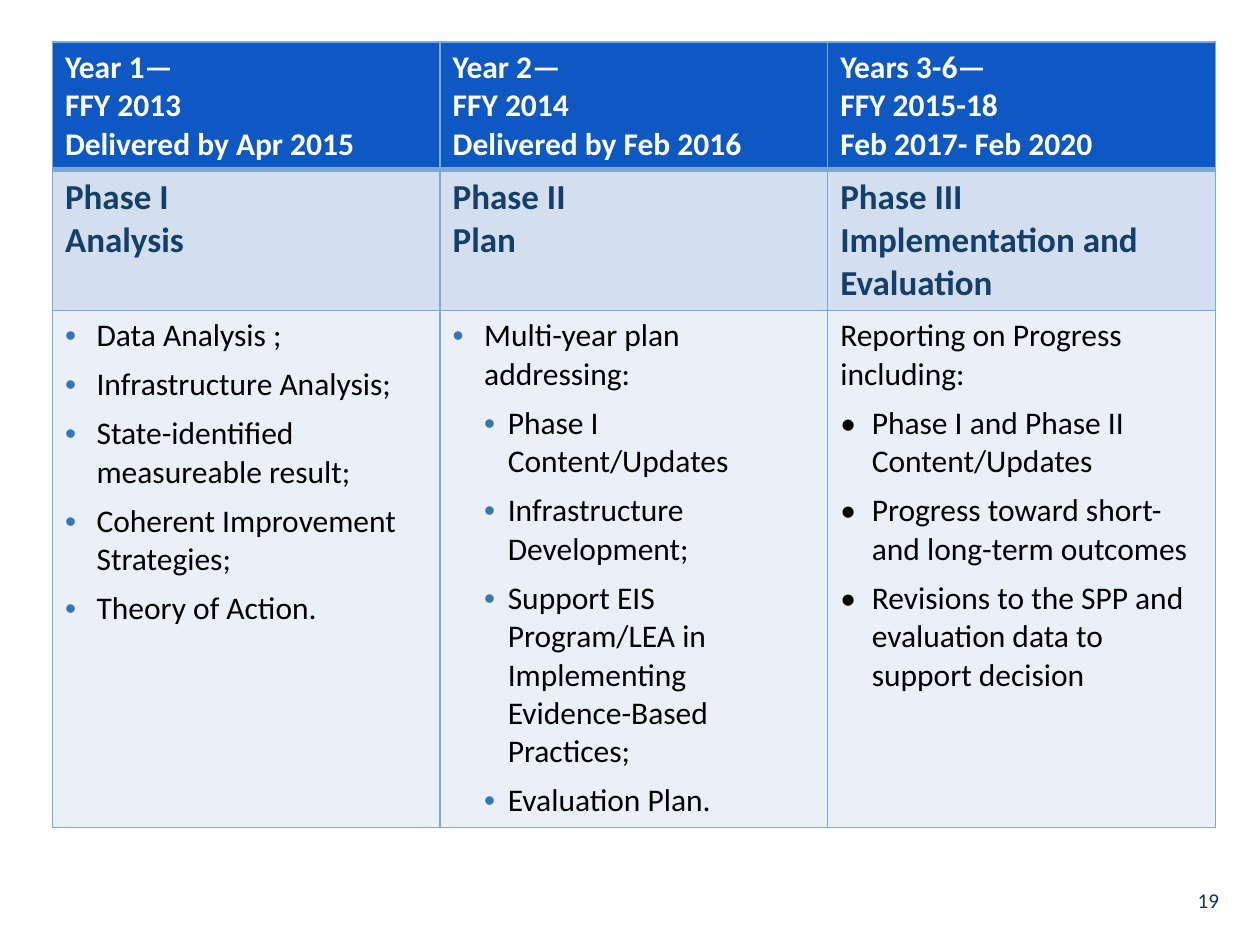
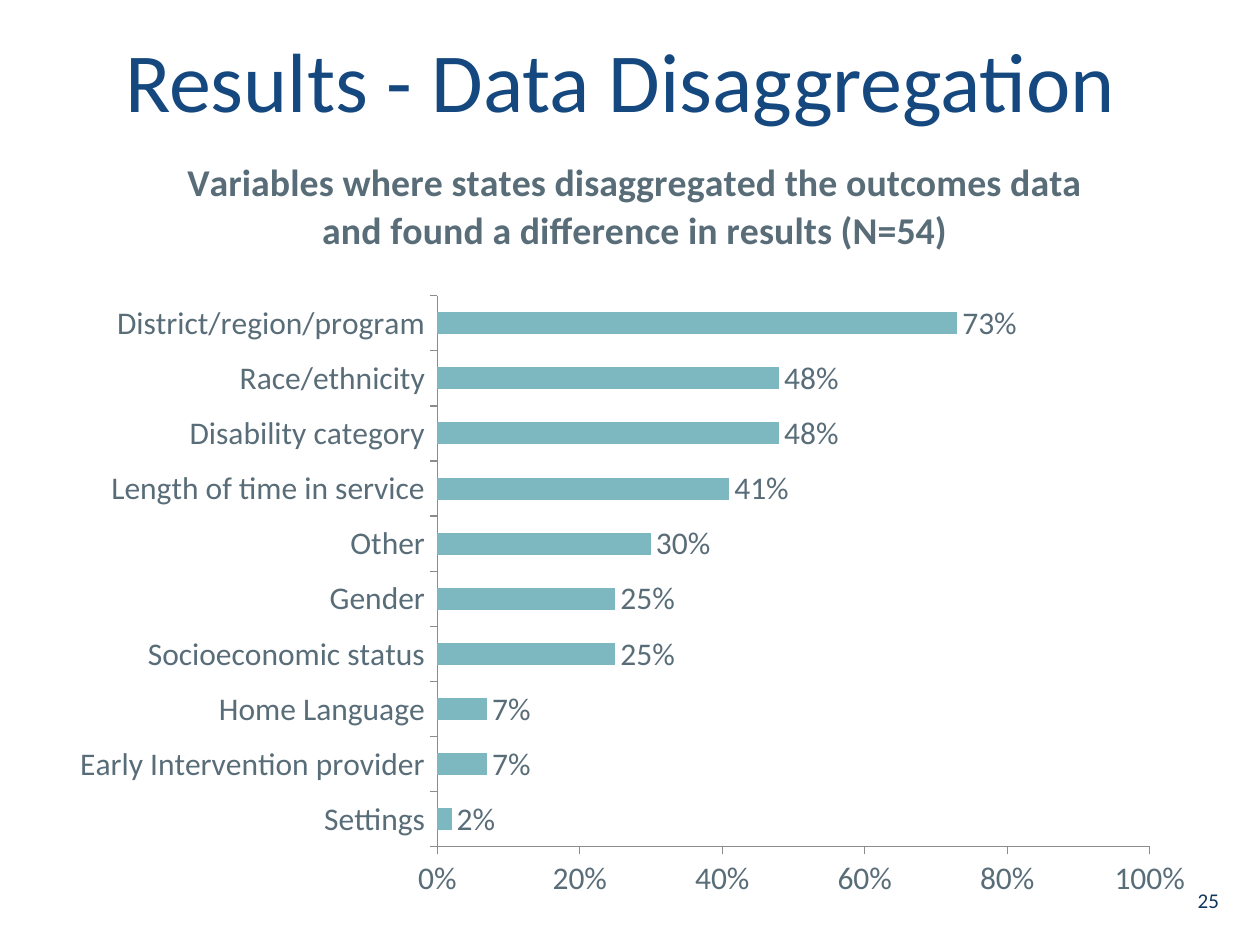
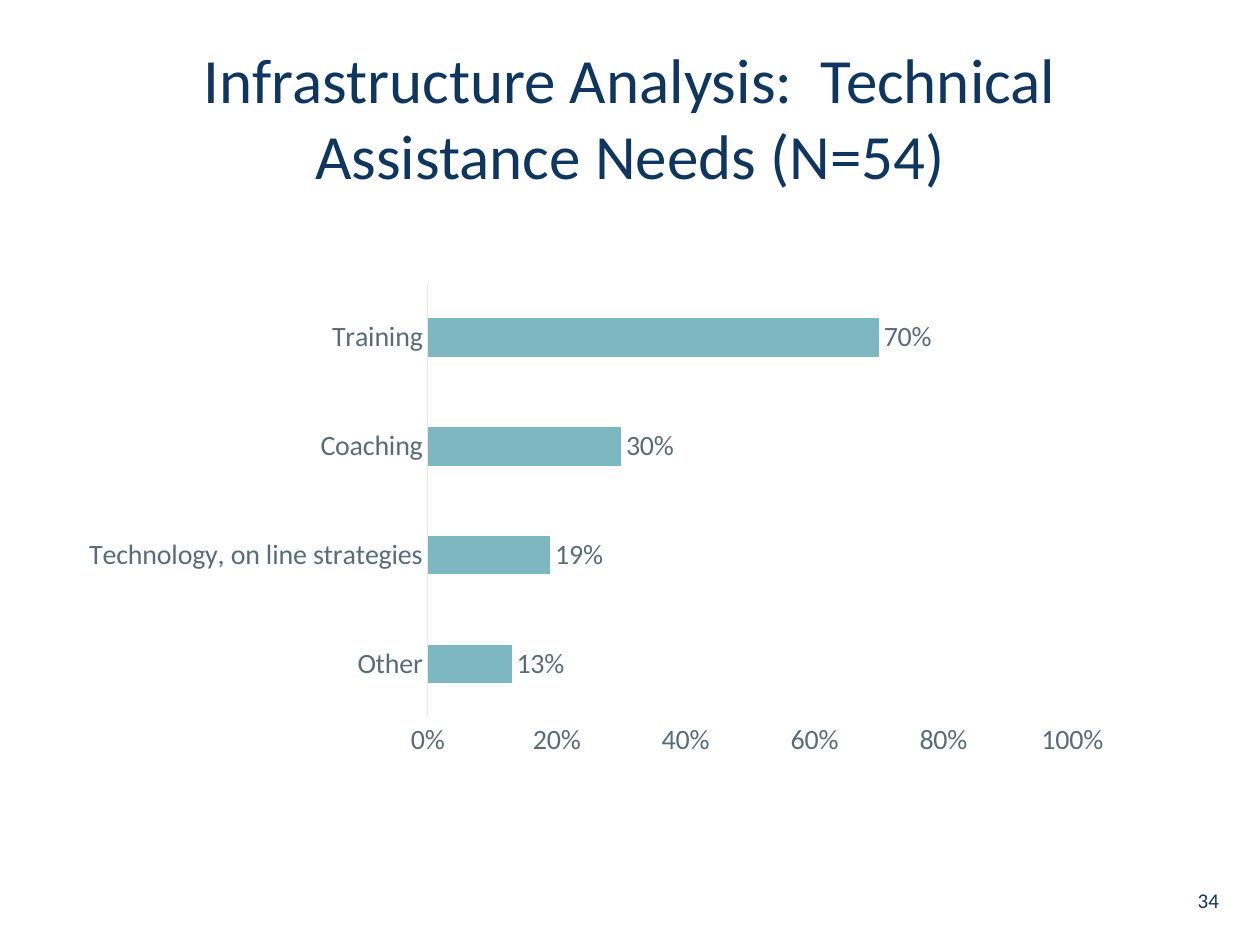
from dataclasses import dataclass

from lxml import etree
from pptx import Presentation
from pptx.chart.data import CategoryChartData
from pptx.dml.color import RGBColor
from pptx.enum.chart import XL_CHART_TYPE, XL_LABEL_POSITION, XL_TICK_MARK
from pptx.enum.text import MSO_ANCHOR, MSO_AUTO_SIZE, PP_ALIGN
from pptx.oxml.ns import qn
from pptx.util import Pt

BAR_CLUSTERED = XL_CHART_TYPE.BAR_CLUSTERED
OUTSIDE_END = XL_LABEL_POSITION.OUTSIDE_END
TICK_OUTSIDE, TICK_NONE = XL_TICK_MARK.OUTSIDE, XL_TICK_MARK.NONE
MIDDLE, BOTTOM = MSO_ANCHOR.MIDDLE, MSO_ANCHOR.BOTTOM
NO_AUTOFIT = MSO_AUTO_SIZE.NONE
CENTER, RIGHT = PP_ALIGN.CENTER, PP_ALIGN.RIGHT

FONT = "Calibri"
BULLET_FONT = "Arial"
WHITE = RGBColor(0xFF, 0xFF, 0xFF)
BLACK = RGBColor(0x00, 0x00, 0x00)
NAVY = RGBColor(0x0F, 0x36, 0x5E)
TITLE_BLUE = RGBColor(0x14, 0x48, 0x7E)
PHASE_BLUE = RGBColor(0x14, 0x3F, 0x6A)
BULLET_BLUE = RGBColor(0x34, 0x77, 0xB2)
HEADER_BLUE = RGBColor(0x0E, 0x58, 0xC4)
PHASE_FILL = RGBColor(0xD3, 0xDF, 0xEE)
BODY_FILL = RGBColor(0xEA, 0xF0, 0xF7)
BORDER_BLUE = RGBColor(0x7C, 0xA9, 0xDA)
CHART_TEXT = RGBColor(0x59, 0x6D, 0x79)
BAR_TEAL = RGBColor(0x7D, 0xB7, 0xBF)
AXIS_GRAY = RGBColor(0x8C, 0x8C, 0x8C)
AXIS_PALE = RGBColor(0xE5, 0xE9, 0xEC)

SLIDE_WIDTH, SLIDE_HEIGHT = 720, 540
TITLE_ONLY, BLANK = 5, 6
PAGE_NUMBER_BOX = (676, 506.5, 20.5, 15)
TABLE_BOX = (30, 24, 664.5, 449)


@dataclass(frozen=True)
class Bullet:
    """Indent, hang, colour and font of one kind of list item."""
    margin: float
    hang: float
    color: RGBColor
    font: str
    level: int = 0


@dataclass(frozen=True)
class RowStyle:
    """Look of one table row."""
    height: float
    fill: RGBColor
    color: RGBColor
    size: float
    bold: bool
    space_after: float
    top_border: float
    bottom_border: float


@dataclass(frozen=True)
class ChartStyle:
    """Look of one bar chart; the plot box is relative to the chart."""
    plot_box: tuple
    size: float
    gap: int
    tick: int
    category_line: RGBColor
    value_line: RGBColor | None


ITEM = Bullet(18, 18, BULLET_BLUE, BULLET_FONT)
SUBITEM = Bullet(31.5, 13.5, BULLET_BLUE, BULLET_FONT, level=1)
BLACK_ITEM = Bullet(18, 18, BLACK, FONT)

ROW_STYLES = [
    RowStyle(73, HEADER_BLUE, WHITE, 18, True, 0, 1, 3),
    RowStyle(80.5, PHASE_FILL, PHASE_BLUE, 20, True, 0, 3, 1),
    RowStyle(295.5, BODY_FILL, BLACK, 18, False, 6, 1, 1),
]
TABLE_ROWS = [
    [
        [("Year 1—\vFFY 2013", None), ("Delivered by Apr 2015", None)],
        [("Year 2—\vFFY 2014", None), ("Delivered by Feb 2016", None)],
        [("Years 3-6—\vFFY 2015-18", None), ("Feb 2017- Feb 2020", None)],
    ],
    [
        [("Phase I", None), ("Analysis", None)],
        [("Phase II", None), ("Plan", None)],
        [("Phase III", None), ("Implementation and Evaluation", None)],
    ],
    [
        [
            ("Data Analysis ;", ITEM),
            ("Infrastructure Analysis;", ITEM),
            ("State-identified measureable result;", ITEM),
            ("Coherent Improvement Strategies;", ITEM),
            ("Theory of Action.", ITEM),
        ],
        [
            ("Multi-year plan addressing:", ITEM),
            ("Phase I Content/Updates", SUBITEM),
            ("Infrastructure Development;", SUBITEM),
            ("Support EIS Program/LEA in Implementing Evidence-Based Practices;",
             SUBITEM),
            ("Evaluation Plan.", SUBITEM),
        ],
        [
            ("Reporting on Progress including:", None),
            ("Phase I and Phase II Content/Updates", BLACK_ITEM),
            ("Progress toward short- and long-term outcomes", BLACK_ITEM),
            ("Revisions to the SPP and evaluation data to support decision",
             BLACK_ITEM),
        ],
    ],
]

DISAGGREGATION_STYLE = ChartStyle((232, 97, 407, 315), 18, 150, TICK_OUTSIDE,
                                  AXIS_GRAY, AXIS_GRAY)
DISAGGREGATION_RESULTS = {
    "Settings": 0.02,
    "Early Intervention provider": 0.07,
    "Home Language": 0.07,
    "Socioeconomic status": 0.25,
    "Gender": 0.25,
    "Other": 0.3,
    "Length of time in service": 0.41,
    "Disability category": 0.48,
    "Race/ethnicity": 0.48,
    "District/region/program": 0.73,
}
ASSISTANCE_STYLE = ChartStyle((208.5, 77.8, 368.3, 248.8), 16, 182, TICK_NONE,
                              AXIS_PALE, None)
ASSISTANCE_NEEDS = {
    "Other": 0.13,
    "Technology, on line strategies": 0.19,
    "Coaching": 0.3,
    "Training": 0.7,
}


def in_points(box):
    """Turn a box of numbers into lengths in points."""
    return [Pt(length) for length in box]


def set_font(font, size, color, bold=False):
    """Apply the deck's typeface with a size, colour and weight."""
    font.name = FONT
    font.size = Pt(size)
    font.bold = bold
    font.color.rgb = color


def format_paragraph(paragraph, size, color, bold=False):
    """Format every run of a paragraph."""
    for run in paragraph.runs:
        set_font(run.font, size, color, bold)


def add_slide(presentation, layout_index, number):
    """Add a slide that carries its page number."""
    slide = presentation.slides.add_slide(
        presentation.slide_layouts[layout_index])
    frame = slide.shapes.add_textbox(*in_points(PAGE_NUMBER_BOX)).text_frame
    frame.margin_left = frame.margin_right = 0
    frame.margin_top = frame.margin_bottom = 0
    frame.word_wrap = True
    frame.vertical_anchor = BOTTOM
    frame.text = str(number)
    frame.paragraphs[0].alignment = RIGHT
    format_paragraph(frame.paragraphs[0], 12, NAVY)
    return slide


def set_title(slide, box, text, size, color):
    """Place and fill the title placeholder."""
    title = slide.shapes.title
    title.left, title.top, title.width, title.height = in_points(box)
    frame = title.text_frame
    frame.auto_size = NO_AUTOFIT
    frame.vertical_anchor = MIDDLE
    frame.text = text
    frame.paragraphs[0].alignment = CENTER
    format_paragraph(frame.paragraphs[0], size, color)


def set_bullet(paragraph, bullet):
    """Give a paragraph a bullet with a hanging indent."""
    paragraph.level = bullet.level
    properties = paragraph._p.get_or_add_pPr()
    properties.set("marL", str(Pt(bullet.margin)))
    properties.set("indent", str(-Pt(bullet.hang)))
    color = etree.SubElement(properties, qn("a:buClr"))
    etree.SubElement(color, qn("a:srgbClr"), val=str(bullet.color))
    etree.SubElement(properties, qn("a:buFont"), typeface=bullet.font)
    etree.SubElement(properties, qn("a:buChar"), char="•")


def set_borders(cell, style):
    """Draw the four borders of a cell."""
    widths = {"a:lnL": 1, "a:lnR": 1,
              "a:lnT": style.top_border, "a:lnB": style.bottom_border}
    properties = cell._tc.get_or_add_tcPr()
    for tag, width in widths.items():
        line = etree.SubElement(properties, qn(tag), w=str(Pt(width)))
        fill = etree.SubElement(line, qn("a:solidFill"))
        etree.SubElement(fill, qn("a:srgbClr"), val=str(BORDER_BLUE))


def fill_cell(cell, entries, style):
    """Write a cell's paragraphs and apply its row style."""
    set_borders(cell, style)
    cell.fill.solid()
    cell.fill.fore_color.rgb = style.fill
    frame = cell.text_frame
    for index, (text, bullet) in enumerate(entries):
        paragraph = frame.add_paragraph() if index else frame.paragraphs[0]
        paragraph.text = text
        paragraph.space_after = Pt(style.space_after)
        if bullet:
            set_bullet(paragraph, bullet)
        format_paragraph(paragraph, style.size, style.color, style.bold)


def add_phase_table(slide, box):
    """Add the table of years, phases and their contents."""
    column_count = len(TABLE_ROWS[0])
    table = slide.shapes.add_table(
        len(TABLE_ROWS), column_count, *in_points(box)).table
    table.first_row = table.horz_banding = False
    for column in table.columns:
        column.width = Pt(box[2] / column_count)
    for row, style, cells in zip(table.rows, ROW_STYLES, TABLE_ROWS):
        row.height = Pt(style.height)
        for cell, entries in zip(row.cells, cells):
            fill_cell(cell, entries, style)


def set_plot_layout(chart, chart_box, plot_box):
    """Fix the inner plot area at a box relative to the chart."""
    plot_area = chart._chartSpace.chart.plotArea
    for layout in plot_area.findall(qn("c:layout")):
        plot_area.remove(layout)
    layout = etree.Element(qn("c:layout"))
    manual = etree.SubElement(layout, qn("c:manualLayout"))
    width, height = chart_box[2:]
    settings = {"layoutTarget": "inner", "xMode": "edge", "yMode": "edge"}
    for tag, length, whole in zip("xywh", plot_box, (width, height) * 2):
        settings[tag] = str(round(length / whole, 4))
    for tag, value in settings.items():
        etree.SubElement(manual, qn(f"c:{tag}"), val=value)
    plot_area.insert(0, layout)


def format_axis(axis, style, line_color):
    """Set an axis's ticks, text and line."""
    axis.has_major_gridlines = False
    axis.major_tick_mark = style.tick
    axis.minor_tick_mark = TICK_NONE
    set_font(axis.tick_labels.font, style.size, CHART_TEXT)
    if line_color is None:
        axis.format.line.fill.background()
    else:
        axis.format.line.color.rgb = line_color
        axis.format.line.width = Pt(0.75)


def add_percent_chart(slide, box, results, style, heading=None):
    """Add a bar chart of shares from 0% to 100%."""
    data = CategoryChartData(number_format="0%")
    data.categories = list(results)
    data.add_series("Series 1", list(results.values()))
    chart = slide.shapes.add_chart(BAR_CLUSTERED, *in_points(box), data).chart
    set_font(chart.font, style.size, CHART_TEXT)
    chart.has_legend = False
    chart.has_title = heading is not None
    if heading:
        frame = chart.chart_title.text_frame
        frame.text = heading
        format_paragraph(frame.paragraphs[0], style.size * 1.2, CHART_TEXT, True)
    set_plot_layout(chart, box, style.plot_box)

    format_axis(chart.category_axis, style, style.category_line)
    values = chart.value_axis
    format_axis(values, style, style.value_line)
    values.minimum_scale, values.maximum_scale = 0, 1
    values.major_unit = 0.2
    values.tick_labels.number_format = "0%"
    values.tick_labels.number_format_is_linked = False

    plot = chart.plots[0]
    plot.gap_width = style.gap
    plot.vary_by_categories = False
    fill = plot.series[0].format.fill
    fill.solid()
    fill.fore_color.rgb = BAR_TEAL
    plot.has_data_labels = True
    labels = plot.data_labels
    labels.show_value = True
    labels.position = OUTSIDE_END
    labels.number_format = "0%"
    labels.number_format_is_linked = False
    set_font(labels.font, style.size, CHART_TEXT)


def main():
    """Build the three slides and save them."""
    presentation = Presentation()
    presentation.slide_width = Pt(SLIDE_WIDTH)
    presentation.slide_height = Pt(SLIDE_HEIGHT)

    phases = add_slide(presentation, BLANK, 19)
    add_phase_table(phases, TABLE_BOX)

    disaggregation = add_slide(presentation, TITLE_ONLY, 25)
    set_title(disaggregation, (36, 0, 648, 90),
              "Results - Data Disaggregation ", 48, TITLE_BLUE)
    add_percent_chart(
        disaggregation, (18, 72, 690, 456), DISAGGREGATION_RESULTS,
        DISAGGREGATION_STYLE,
        "Variables where states disaggregated the outcomes data "
        "and found a difference in results (N=54)")

    assistance = add_slide(presentation, TITLE_ONLY, 34)
    set_title(assistance, (36, 21.6, 648, 90),
              "Infrastructure Analysis:  Technical Assistance Needs (N=54)",
              36, NAVY)
    add_percent_chart(assistance, (36, 84, 624, 360), ASSISTANCE_NEEDS,
                      ASSISTANCE_STYLE)

    presentation.save("out.pptx")


if __name__ == "__main__":
    main()
